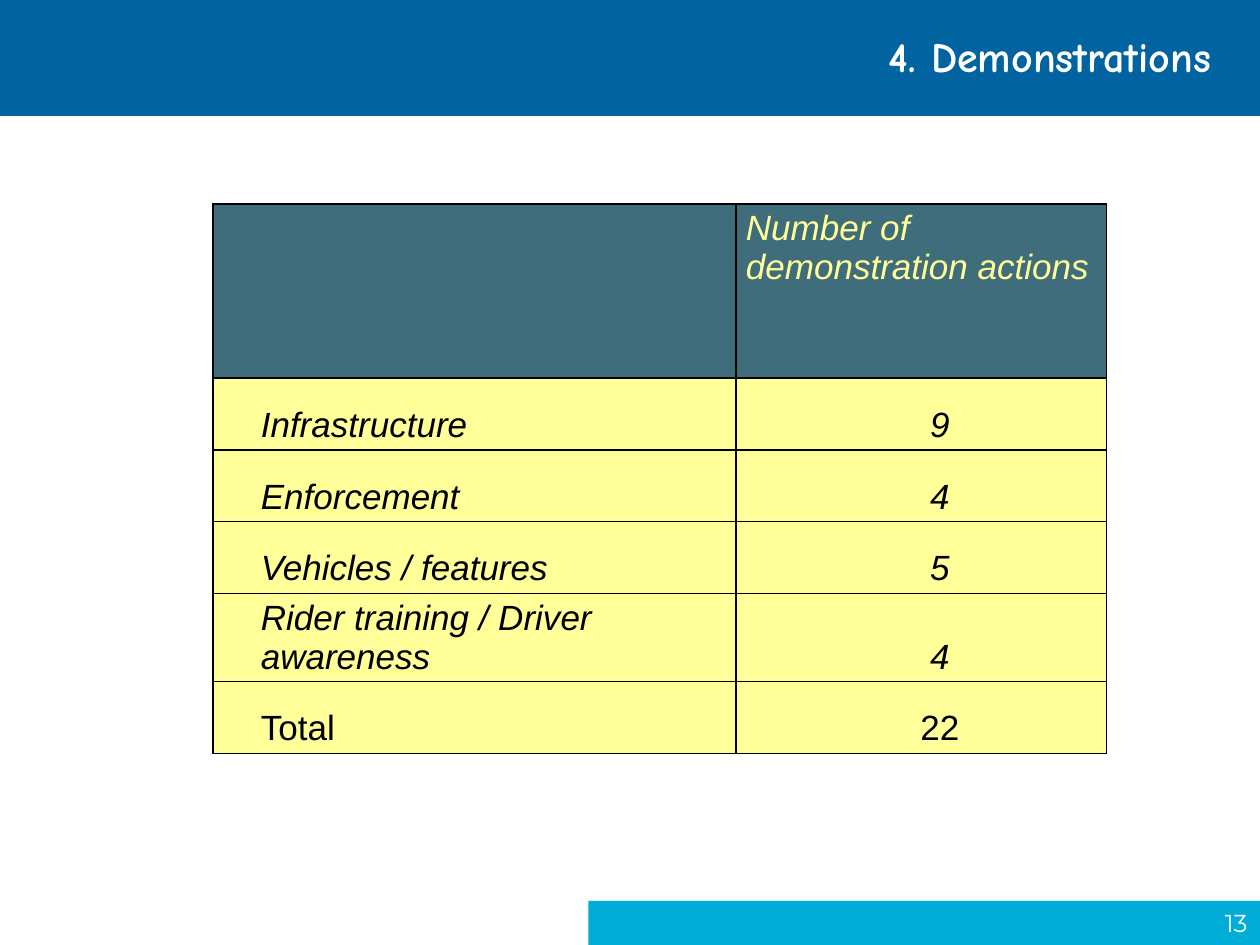
from lxml.etree import SubElement
from pptx import Presentation
from pptx.dml.color import RGBColor
from pptx.enum.shapes import MSO_SHAPE
from pptx.enum.text import MSO_ANCHOR, PP_ALIGN
from pptx.oxml.ns import qn
from pptx.util import Inches, Pt


def style(p, name, size, color, align=PP_ALIGN.LEFT, bold=False, italic=False):
    p.alignment = align
    p.font.name, p.font.size = name, Pt(size)
    p.font.bold, p.font.italic = bold, italic
    p.font.color.rgb = RGBColor.from_string(color)


def add_borders(cell, color="000000", width=1):
    tcPr = cell._tc.get_or_add_tcPr()
    for side in ("L", "R", "T", "B"):
        ln = SubElement(tcPr, qn(f"a:ln{side}"), w=str(Pt(width)))
        SubElement(SubElement(ln, qn("a:solidFill")), qn("a:srgbClr"), val=color)


prs = Presentation()
prs.slide_width, prs.slide_height = Inches(10), Inches(7.5)
s = prs.slides.add_slide(prs.slide_layouts[5])
title = s.shapes.title

# Footer and header bands, behind the title
bands = []
for color, box in (("00ADD6", (4.67, 7.15, 5.33, 0.35)), ("01639F", (0, 0, 10, 0.92))):
    band = s.shapes.add_shape(MSO_SHAPE.RECTANGLE, *map(Inches, box))
    band.shadow.inherit = False
    band.fill.solid()
    band.fill.fore_color.rgb = RGBColor.from_string(color)
    band.line.fill.background()
    title.element.addprevious(band.element)
    bands.append(band)

# Page number in the footer
tf = bands[0].text_frame
tf.word_wrap = False
tf.vertical_anchor = MSO_ANCHOR.MIDDLE
tf.margin_left = tf.margin_top = tf.margin_bottom = 0
tf.margin_right = Inches(0.1)
tf.text = "13"
style(tf.paragraphs[0], "Montserrat", 14, "FFFFFF", PP_ALIGN.RIGHT)

# Title
title.left, title.top = Inches(2.72), Inches(0.15)
title.width, title.height = Inches(7.12), Inches(0.58)
tf = title.text_frame
tf.text = "4. Demonstrations"
tf.vertical_anchor = MSO_ANCHOR.MIDDLE
tf.margin_right = Inches(0.23)
style(tf.paragraphs[0], "Comic Neue", 24, "FFFFFF", PP_ALIGN.RIGHT, bold=True)

# Table of demonstration actions
rows = [
    ("", "Number of demonstration actions"),
    ("Infrastructure", "9"),
    ("Enforcement", "4"),
    ("Vehicles / features", "5"),
    ("Rider training / Driver awareness", "4"),
    ("Total", "22"),
]
table = s.shapes.add_table(len(rows), 2, Inches(1.69), Inches(1.62),
                           Inches(7.09), Inches(4.23)).table
table.first_row = table.horz_banding = False
table.columns[0].width, table.columns[1].width = Inches(4.15), Inches(2.94)

for i, row in enumerate(rows):
    header = i == 0
    table.rows[i].height = Inches(1.38 if header else 0.57)
    for j, text in enumerate(row):
        cell = table.cell(i, j)
        add_borders(cell)
        cell.fill.solid()
        cell.fill.fore_color.rgb = RGBColor.from_string("406D7C" if header else "FFFF99")
        cell.margin_left = cell.margin_right = Inches(0.08)
        cell.margin_top = cell.margin_bottom = Inches(0.04)
        cell.vertical_anchor = MSO_ANCHOR.TOP if header else MSO_ANCHOR.BOTTOM
        cell.text = text
        p = cell.text_frame.paragraphs[0]
        if not header:
            pPr = p._p.get_or_add_pPr()
            pPr.set("marL", str(Inches(0.3)))
            pPr.set("indent", "0")
        style(p, "Arial", 20, "FFFF99" if header else "000000",
              PP_ALIGN.CENTER if j and not header else PP_ALIGN.LEFT,
              italic=row[0] != "Total")

prs.save("out.pptx")
